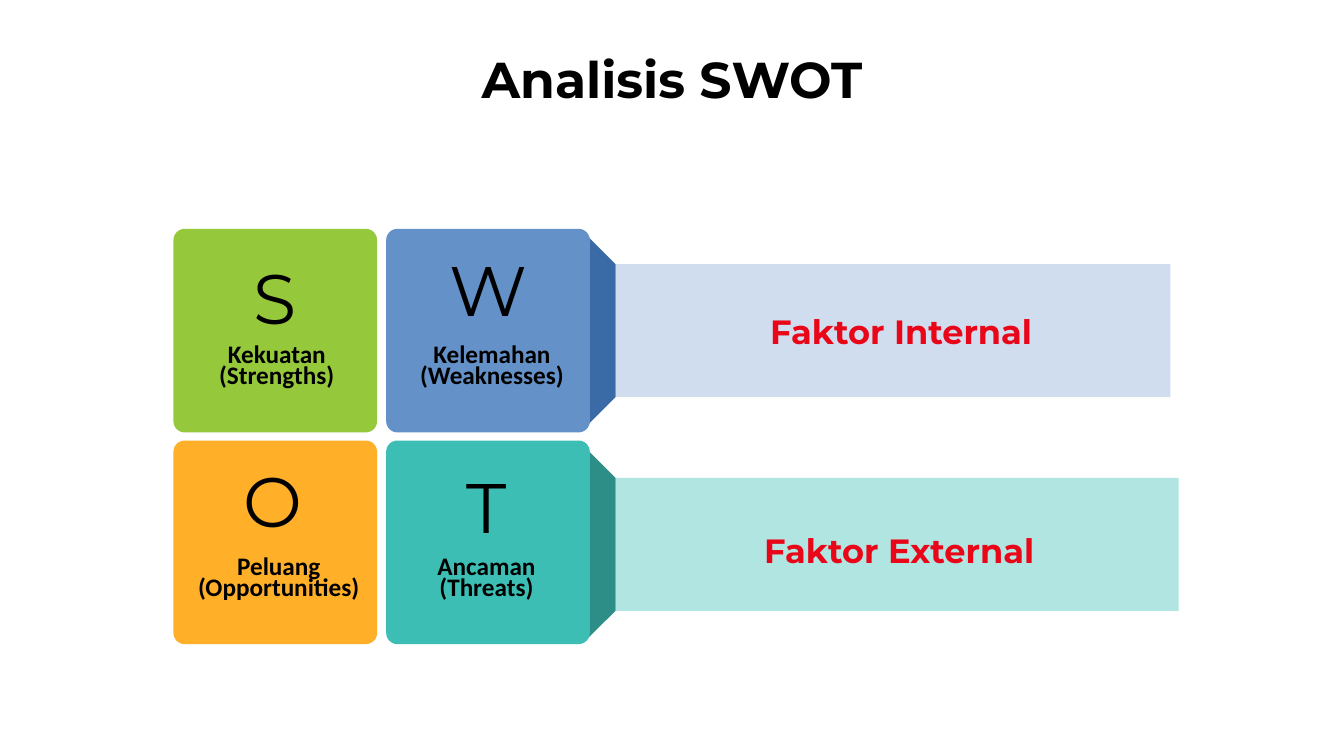
from dataclasses import dataclass
from lxml import etree
from pptx import Presentation
from pptx import util as u
from pptx.dml.color import RGBColor
from pptx.enum import shapes, text
from pptx.oxml import ns

Kind = shapes.MSO_SHAPE
Mid = text.MSO_ANCHOR.MIDDLE
Top = text.MSO_ANCHOR.TOP
Left = text.PP_ALIGN.LEFT
Center = text.PP_ALIGN.CENTER


@dataclass(frozen=True)
class Theme:
    ink: str = "000000"
    red: str = "EA0619"
    green: str = "96C83C"
    blue: str = "6491C8"
    navy: str = "3B6BA6"
    gold: str = "FFAF28"
    teal: str = "3CBEB4"
    pine: str = "2D8E87"
    head: str = "Montserrat"
    body: str = "Calibri"
    title: int = 36
    letter: int = 50
    label: int = 18
    factor: int = 24


class Board:
    def __init__(self, deck, theme):
        self.theme = theme
        self.slide = deck.slides.add_slide(deck.slide_layouts[6])

    def shape(self, kind, box, color, adjust=None, turn=0, alpha=None):
        item = self.slide.shapes.add_shape(kind, *map(u.Inches, box))
        item.shadow.inherit = False
        item.line.fill.background()
        item.fill.solid()
        item.fill.fore_color.rgb = RGBColor.from_string(color)
        item.rotation = turn
        if adjust is not None:
            item.adjustments[0] = adjust
        if alpha is not None:
            tint = item.fill._xPr.find(".//" + ns.qn("a:srgbClr"))
            etree.SubElement(tint, ns.qn("a:alpha"), val=str(alpha * 1000))

    def text(self, box, words, size, font, color=None, bold=True,
             align=Center, anchor=Top, space=None, wrap=True):
        frame = self.slide.shapes.add_textbox(*map(u.Inches, box)).text_frame
        frame.word_wrap = wrap
        frame.auto_size = text.MSO_AUTO_SIZE.SHAPE_TO_FIT_TEXT
        frame.vertical_anchor = anchor
        para = frame.paragraphs[0]
        para.alignment = align
        para.line_spacing = space
        run = para.add_run()
        run.text = words
        run.font.size = u.Pt(size)
        run.font.name = font
        run.font.bold = bold
        run.font.color.rgb = RGBColor.from_string(color or self.theme.ink)

    def band(self, top, width, color, alpha, fold):
        self.shape(Kind.DIAGONAL_STRIPE, (5.17, top, 1.32, 1.32), fold,
                   adjust=0.706, turn=135)
        self.shape(Kind.RECTANGLE, (6.11, top, width, 1.32), color, alpha=alpha)

    def tile(self, col, row, color):
        box = (1.72 + 2.11 * col, 2.27 + 2.1 * row, 2.02, 2.02)
        self.shape(Kind.ROUNDED_RECTANGLE, box, color, adjust=0.055)

    def letter(self, left, top, width, sign):
        self.text((left, top, width, 0.94), sign, self.theme.letter,
                  self.theme.head, bold=False, anchor=Mid, wrap=False)

    def label(self, left, row, width, words):
        self.text((left, 3.4 + 2.1 * row, width, 0.53), words,
                  self.theme.label, self.theme.body, space=u.Pt(15))

    def factor(self, left, top, words):
        self.text((left, top, 3.32, 0.64), words, self.theme.factor,
                  self.theme.head, self.theme.red, align=Left, anchor=Mid,
                  space=1.5)

    def title(self, words):
        self.text((3.25, 0.58, 6.83, 0.56), words, self.theme.title,
                  self.theme.head, space=u.Pt(32))


def main():
    deck = Presentation()
    deck.slide_width = u.Inches(13.33)
    deck.slide_height = u.Inches(7.5)
    theme = Theme()
    board = Board(deck, theme)

    board.band(4.74, 5.58, theme.teal, 40, theme.pine)
    board.band(2.62, 5.5, theme.blue, 30, theme.navy)

    colors = (theme.green, theme.blue, theme.gold, theme.teal)
    for spot, color in enumerate(colors):
        row, col = divmod(spot, 2)
        board.tile(col, row, color)

    for item in ((2.31, 4.49, 0.79, "O"), (2.41, 2.47, 0.64, "S"),
                 (4.51, 4.54, 0.63, "T"), (4.35, 2.39, 0.98, "W")):
        board.letter(*item)

    for item in ((1.95, 0, 1.59, "Kekuatan (Strengths)"),
                 (1.86, 1, 1.81, "Peluang (Opportunities)"),
                 (4.03, 0, 1.7, "Kelemahan (Weaknesses)"),
                 (4.03, 1, 1.59, "Ancaman (Threats)")):
        board.label(*item)

    board.factor(7.54, 2.86, "Faktor Internal")
    board.factor(7.48, 5.04, "Faktor External")
    board.title("Analisis SWOT")
    deck.save("out.pptx")


if __name__ == "__main__":
    main()
